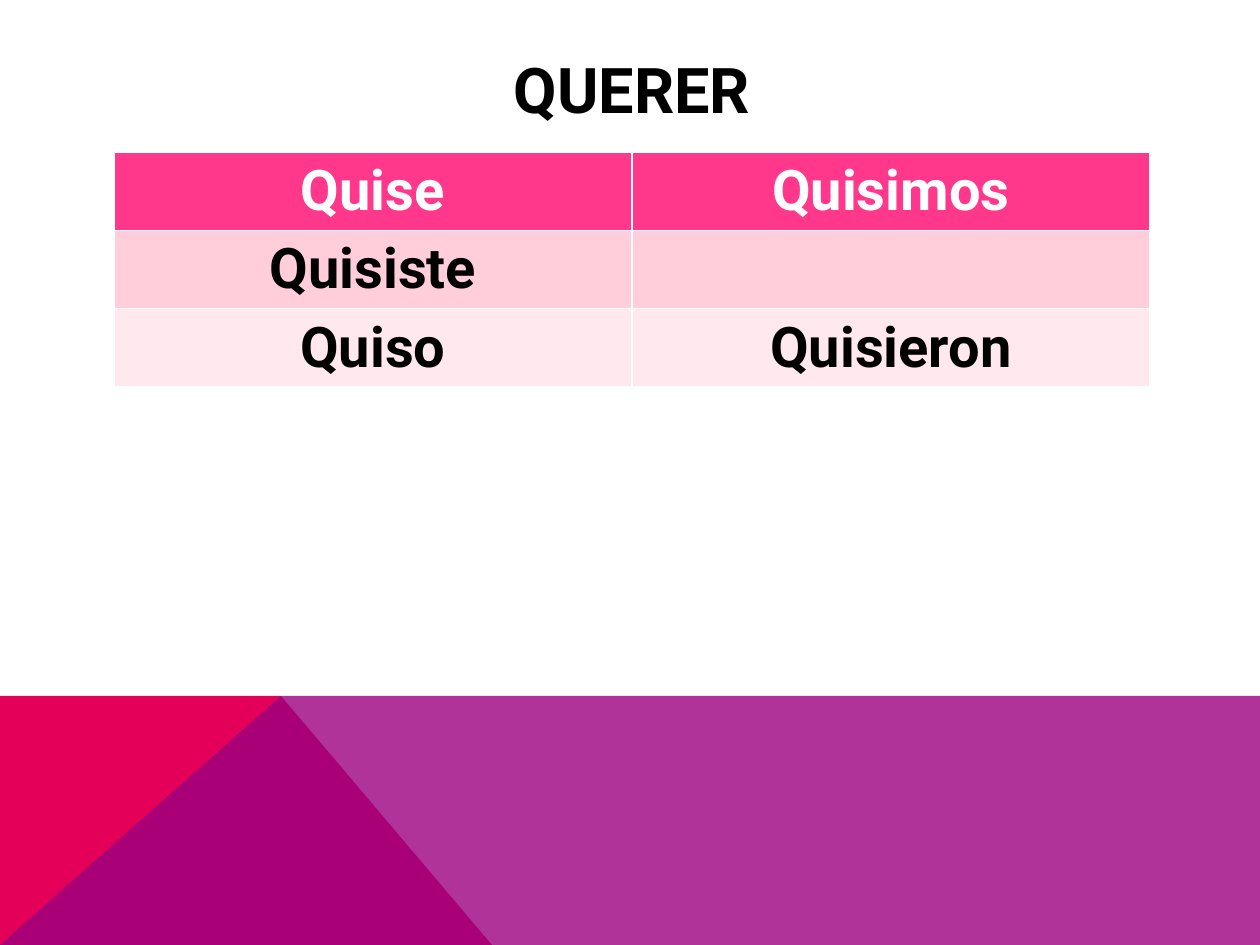
from lxml.etree import SubElement
from pptx import Presentation
from pptx.dml.color import RGBColor
from pptx.enum.text import MSO_ANCHOR, PP_ALIGN
from pptx.oxml.ns import qn
from pptx.util import Pt

# Content
TITLE = "QUERER"
CONJUGATION = [
    ("Quise", "Quisimos"),
    ("Quisiste", ""),
    ("Quiso", "Quisieron"),
]
ROW_STYLES = [("FF388C", "FFFFFF"), ("FFCEDA", "000000"), ("FFE8EE", "000000")]

# Layout in px
PX = 914400 // 126
WIDTH, HEIGHT = 1260, 945
BAND_TOP, PEAK_X, FOOT_X = 696, 281, 492
TABLE_LEFT, TABLE_TOP, COLUMN_WIDTH, ROW_HEIGHT = 114, 152, 518, 78

# Bottom band: outline, colour, opacity in percent
BAND = [
    ([(0, HEIGHT), (0, BAND_TOP), (PEAK_X, BAND_TOP), (FOOT_X, HEIGHT)], "E40059", 100),
    ([(0, HEIGHT), (PEAK_X, BAND_TOP), (WIDTH, BAND_TOP), (WIDTH, HEIGHT)], "9C007F", 80),
]


def color(hex_code):
    return RGBColor.from_string(hex_code)


def paint(fill, hex_code):
    fill.solid()
    fill.fore_color.rgb = color(hex_code)


def write(frame, text, size, hex_code):
    frame.text = text
    paragraph = frame.paragraphs[0]
    paragraph.alignment = PP_ALIGN.CENTER
    font = paragraph.font
    font.name, font.size, font.bold = "Roboto", Pt(size), True
    font.color.rgb = color(hex_code)


presentation = Presentation()
presentation.slide_width, presentation.slide_height = WIDTH * PX, HEIGHT * PX
slide = presentation.slides.add_slide(presentation.slide_layouts[5])
paint(slide.background.fill, "FFFFFF")

# Bottom band
for (start, *corners), hex_code, opacity in BAND:
    builder = slide.shapes.build_freeform(*start, scale=PX)
    builder.add_line_segments(corners, close=True)
    panel = builder.convert_to_shape()
    panel.shadow.inherit = False
    panel.line.fill.background()
    paint(panel.fill, hex_code)
    if opacity < 100:
        srgb = panel.fill._xPr.find(qn("a:solidFill")).find(qn("a:srgbClr"))
        SubElement(srgb, qn("a:alpha"), val=str(opacity * 1000))

# Title
title = slide.shapes.title
title.left, title.top, title.width, title.height = (n * PX for n in (114, 50, 1036, 76))
write(title.text_frame, TITLE, 36, "000000")
title.text_frame.vertical_anchor = MSO_ANCHOR.MIDDLE

# Conjugation table, with the white rules of the default style
rows, columns = len(CONJUGATION), len(CONJUGATION[0])
table = slide.shapes.add_table(
    rows, columns, TABLE_LEFT * PX, TABLE_TOP * PX,
    columns * COLUMN_WIDTH * PX, rows * ROW_HEIGHT * PX,
).table
for r, (forms, (fill_hex, text_hex)) in enumerate(zip(CONJUGATION, ROW_STYLES)):
    for c, form in enumerate(forms):
        cell = table.cell(r, c)
        paint(cell.fill, fill_hex)
        if form:
            write(cell.text_frame, form, 32, text_hex)

presentation.save("out.pptx")
